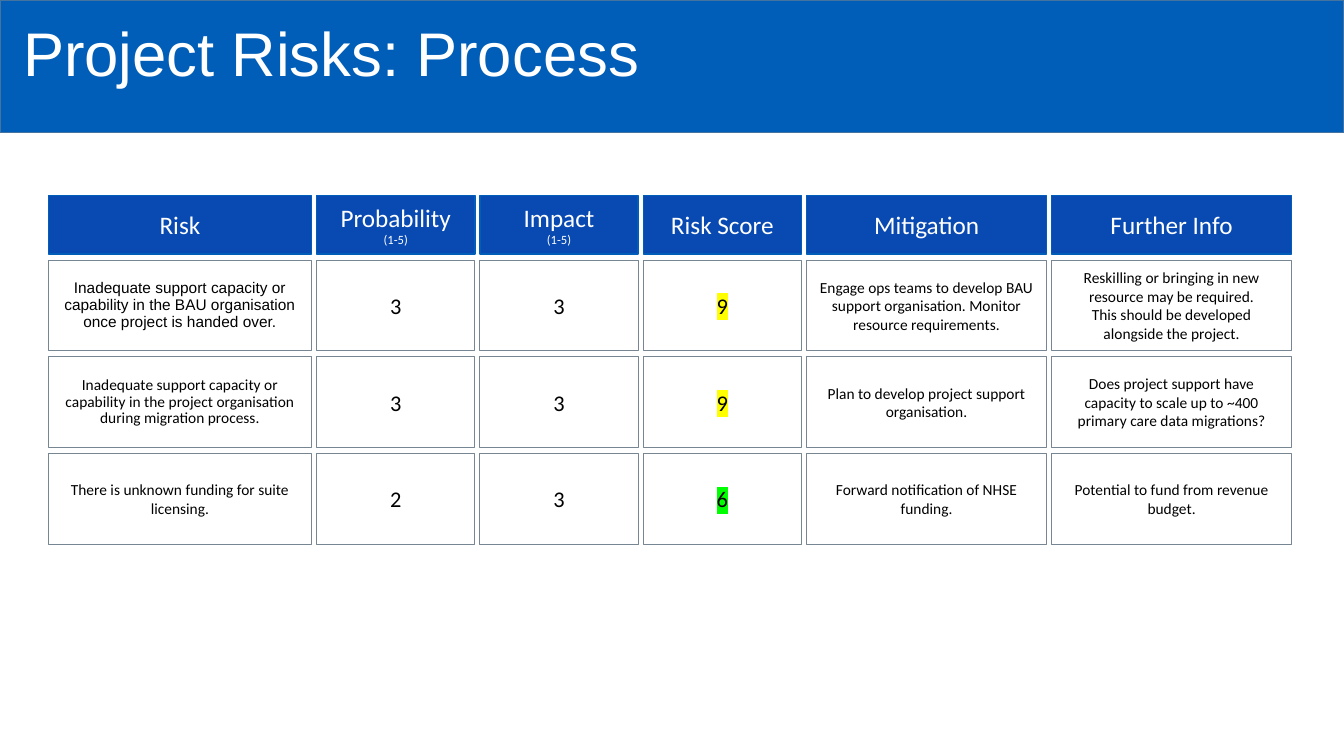
from dataclasses import dataclass
from itertools import accumulate

from lxml import etree
from pptx import Presentation
from pptx.dml.color import RGBColor
from pptx.enum.shapes import MSO_SHAPE
from pptx.enum.text import MSO_ANCHOR, PP_ALIGN
from pptx.oxml.ns import qn
from pptx.util import Inches, Pt

RECTANGLE = MSO_SHAPE.RECTANGLE
MIDDLE = MSO_ANCHOR.MIDDLE
CENTER = PP_ALIGN.CENTER


@dataclass(frozen=True)
class Theme:
    """Colours, fonts and type sizes of the slide."""

    banner: str = "005EB8"
    banner_edge: str = "43739E"
    header: str = "094AB2"
    cell_edge: str = "768692"
    light: str = "FFFFFF"
    dark: str = "000000"
    medium_risk: str = "FFFF00"
    low_risk: str = "00FF00"
    title_font: str = "Arial"
    body_font: str = "Calibri"
    title_size: int = 44
    header_size: int = 18
    scale_size: int = 9
    score_size: int = 16
    detail_size: int = 11


THEME = Theme()
SLIDE_WIDTH, SLIDE_HEIGHT = 13.33, 7.5
GRID_LEFT, GRID_TOP = 0.48, 1.94
COLUMN_WIDTHS = [2.61, 1.57, 1.57, 1.57, 2.38, 2.38]
ROW_HEIGHTS = [0.58, 0.9, 0.9, 0.9]
COLUMN_GAP, ROW_GAP = 0.05, 0.06
MEDIUM_SCORE = 9

HEADERS = [
    ["Risk"],
    ["Probability", "(1-5)"],
    ["Impact", "(1-5)"],
    ["Risk Score"],
    ["Mitigation"],
    ["Further Info"],
]


@dataclass(frozen=True)
class Risk:
    """One row of the risk register."""

    description: str
    probability: int
    impact: int
    mitigation: str
    further_info: list[str]
    font: str = THEME.body_font
    line_spacing: float = 1.0


RISKS = [
    Risk(
        "Inadequate support capacity or capability in the BAU organisation "
        "once project is handed over.",
        3, 3,
        "Engage ops teams to develop BAU support organisation. "
        "Monitor resource requirements.",
        ["Reskilling or bringing in new resource may be required.",
         "This should be developed alongside the project."],
        font=THEME.title_font, line_spacing=0.9,
    ),
    Risk(
        "Inadequate support capacity or capability in the project "
        "organisation during migration process.",
        3, 3,
        "Plan to develop project support organisation.",
        ["Does project support have capacity to scale up to ~400 "
         "primary care data migrations?"],
        line_spacing=0.9,
    ),
    Risk(
        "There is unknown funding for suite licensing.",
        2, 3,
        "Forward notification of NHSE funding.",
        ["Potential to fund from revenue budget."],
    ),
]


def track_starts(origin, sizes, gap):
    """Return the start of each grid track."""
    return list(accumulate((size + gap for size in sizes[:-1]), initial=origin))


COLUMN_STARTS = track_starts(GRID_LEFT, COLUMN_WIDTHS, COLUMN_GAP)
ROW_STARTS = track_starts(GRID_TOP, ROW_HEIGHTS, ROW_GAP)


def add_panel(slide, left, top, width, height, fill, edge, edge_width):
    """Add an outlined rectangle, filled when a colour is given."""
    panel = slide.shapes.add_shape(
        RECTANGLE, Inches(left), Inches(top), Inches(width), Inches(height))
    panel.shadow.inherit = False
    if fill:
        panel.fill.solid()
        panel.fill.fore_color.rgb = RGBColor.from_string(fill)
    else:
        panel.fill.background()
    panel.line.color.rgb = RGBColor.from_string(edge)
    panel.line.width = Pt(edge_width)
    return panel


def style_paragraph(paragraph, size, color, font):
    """Set the type of a whole paragraph."""
    paragraph.font.size = Pt(size)
    paragraph.font.name = font
    paragraph.font.color.rgb = RGBColor.from_string(color)


def highlight(run, color):
    """Mark a run with a highlight colour."""
    mark = etree.SubElement(run.font._element, qn("a:highlight"))
    etree.SubElement(mark, qn("a:srgbClr"), val=color)


def add_cell(slide, column, row, lines, sizes, color=THEME.dark, fill=None,
             edge=THEME.cell_edge, edge_width=0.75, font=THEME.body_font,
             line_spacing=1.0):
    """Add a grid cell with centred lines and return its text frame."""
    cell = add_panel(slide, COLUMN_STARTS[column], ROW_STARTS[row],
                     COLUMN_WIDTHS[column], ROW_HEIGHTS[row],
                     fill, edge, edge_width)
    frame = cell.text_frame
    frame.word_wrap = True
    frame.vertical_anchor = MIDDLE
    for index, (line, size) in enumerate(zip(lines, sizes)):
        paragraph = frame.add_paragraph() if index else frame.paragraphs[0]
        paragraph.add_run().text = line
        paragraph.alignment = CENTER
        paragraph.line_spacing = line_spacing
        style_paragraph(paragraph, size, color, font)
    return frame


def add_title(slide, title):
    """Add the banner and the slide title."""
    add_panel(slide, 0, 0, SLIDE_WIDTH, SLIDE_HEIGHT * 0.175,
              THEME.banner, THEME.banner_edge, 1)
    title_box = slide.shapes.add_textbox(
        Inches(0.13), Inches(0.02), Inches(6.85), Inches(1.09))
    frame = title_box.text_frame
    frame.word_wrap = True
    frame.vertical_anchor = MIDDLE
    heading = frame.paragraphs[0]
    heading.add_run().text = title
    heading.line_spacing = 0.9
    style_paragraph(heading, THEME.title_size, THEME.light, THEME.title_font)


def add_headers(slide):
    """Add the header row of the register."""
    for column, lines in enumerate(HEADERS):
        add_cell(slide, column, 0, lines,
                 [THEME.header_size, THEME.scale_size], color=THEME.light,
                 fill=THEME.header, edge=THEME.banner, edge_width=1)


def add_risk(slide, row, risk):
    """Add one risk with its ratings, score and responses."""
    detail, rating = [THEME.detail_size] * 2, [THEME.score_size]
    score = risk.probability * risk.impact
    add_cell(slide, 0, row, [risk.description], detail,
             font=risk.font, line_spacing=risk.line_spacing)
    add_cell(slide, 1, row, [str(risk.probability)], rating)
    add_cell(slide, 2, row, [str(risk.impact)], rating)
    score_frame = add_cell(slide, 3, row, [str(score)], rating)
    highlight(score_frame.paragraphs[0].runs[0],
              THEME.medium_risk if score >= MEDIUM_SCORE else THEME.low_risk)
    add_cell(slide, 4, row, [risk.mitigation], detail)
    add_cell(slide, 5, row, risk.further_info, detail)


def main():
    """Build and save the slide."""
    deck = Presentation()
    deck.slide_width, deck.slide_height = Inches(SLIDE_WIDTH), Inches(SLIDE_HEIGHT)
    slide = deck.slides.add_slide(deck.slide_layouts[6])
    add_title(slide, "Project Risks: Process")
    add_headers(slide)
    for row, risk in enumerate(RISKS, start=1):
        add_risk(slide, row, risk)
    deck.save("out.pptx")


if __name__ == "__main__":
    main()
